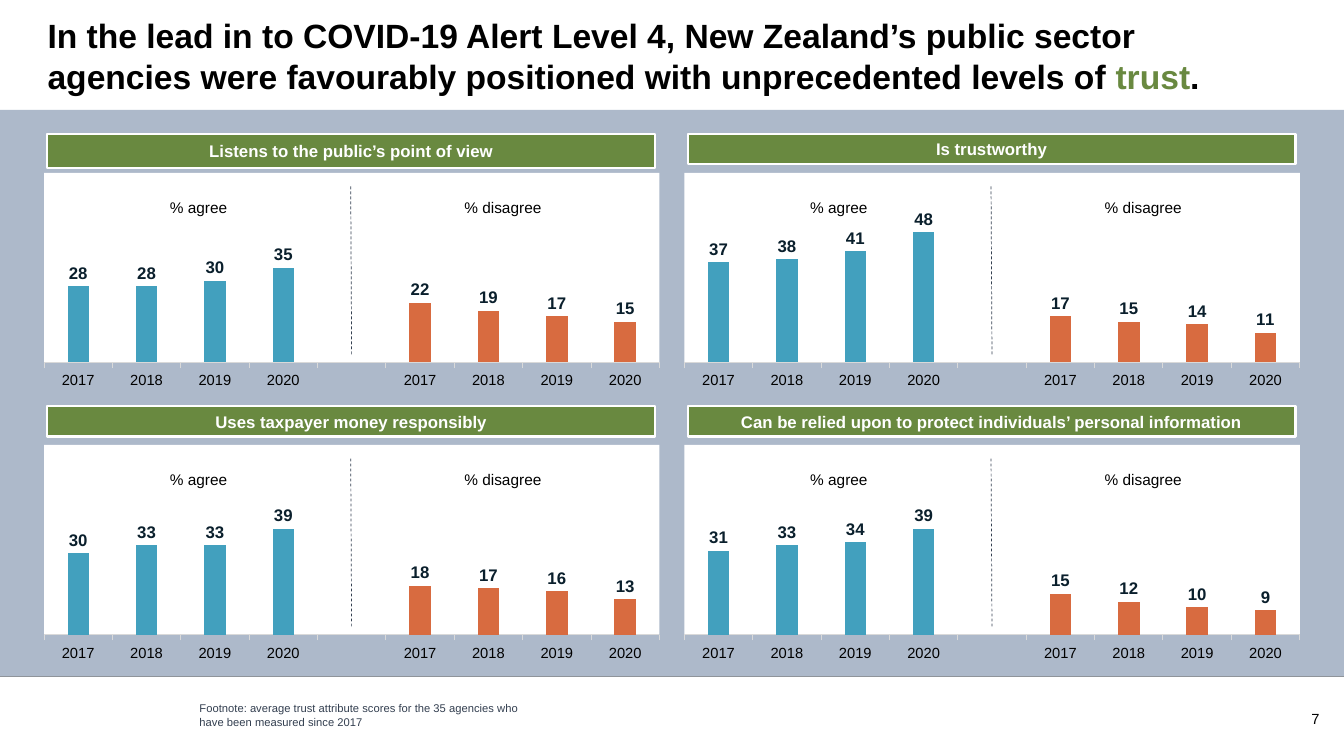
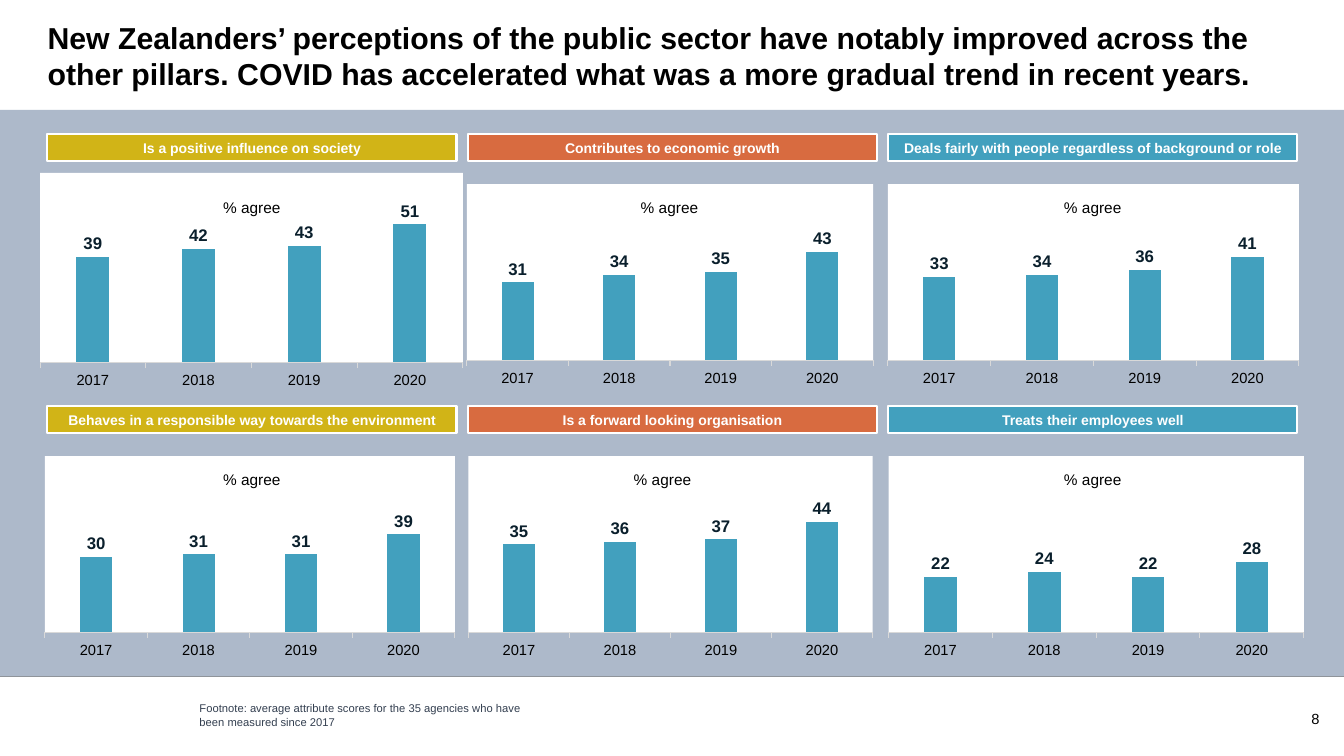
from dataclasses import dataclass

from pptx import Presentation
from pptx.chart.data import CategoryChartData
from pptx.dml.color import RGBColor
from pptx.enum.chart import XL_CHART_TYPE as ChartType
from pptx.enum.chart import XL_LABEL_POSITION as LabelPosition
from pptx.enum.chart import XL_TICK_MARK as TickMark
from pptx.enum.dml import MSO_LINE as LineStyle
from pptx.enum.shapes import MSO_CONNECTOR as Connector
from pptx.enum.shapes import MSO_SHAPE as Shape
from pptx.enum.text import MSO_ANCHOR as Anchor
from pptx.enum.text import MSO_AUTO_SIZE as AutoSize
from pptx.enum.text import PP_ALIGN as Align
from pptx.oxml import parse_xml
from pptx.oxml.ns import nsdecls, qn
from pptx.util import Pt

BLACK = RGBColor(0x00, 0x00, 0x00)
WHITE = RGBColor(0xFF, 0xFF, 0xFF)
GREEN = RGBColor(0x69, 0x89, 0x40)
BLUE = RGBColor(0x42, 0xA0, 0xBE)
ORANGE = RGBColor(0xD8, 0x6B, 0x40)
YELLOW = RGBColor(0xD1, 0xB4, 0x17)
BAND = RGBColor(0xAD, 0xB9, 0xCA)
SLATE = RGBColor(0x33, 0x3F, 0x50)
NAVY = RGBColor(0x0A, 0x1F, 0x2C)
RULE_GRAY = RGBColor(0x80, 0x80, 0x80)
AXIS_GRAY = RGBColor(0xD9, 0xD9, 0xD9)

FONT = "Arial"
SLIDE_WIDTH, SLIDE_HEIGHT = 960, 540
BAND_TOP, BAND_BOTTOM = 78.5, 483.1
FIRST_ROW, ROW_PITCH = 95.8, 194.4
CHART_HEIGHT = 161.3
YEARS = ["2017", "2018", "2019", "2020"]
WIDE_PLOT = (0.02, 0.02, 0.96, 0.84)


@dataclass
class Panel:
    heading: str
    values: list
    color: RGBColor = GREEN
    heading_height: float = 21.6
    chart_shift: float = 0
    chart_width: float = 303
    plot: tuple = WIDE_PLOT
    label_shift: float = 90


TRUST_PANELS = [
    Panel("Listens to the public’s point of view",
          [28, 28, 30, 35, None, 22, 19, 17, 15], heading_height=24),
    Panel("Is trustworthy", [37, 38, 41, 48, None, 17, 15, 14, 11]),
    Panel("Uses taxpayer money responsibly",
          [30, 33, 33, 39, None, 18, 17, 16, 13]),
    Panel("Can be relied upon to protect individuals’ personal information",
          [31, 33, 34, 39, None, 15, 12, 10, 9]),
]

PILLAR_PANELS = [
    Panel("Is a positive influence on society", [39, 42, 43, 51], YELLOW,
          19.4, -11.5, 314.6),
    Panel("Contributes to economic growth", [31, 34, 35, 43], ORANGE,
          19.4, -1, 291, (0, 0.07, 1, 0.78), 88),
    Panel("Deals fairly with people regardless of background or role",
          [33, 34, 36, 41], BLUE, 19.4, -0.5, 303, (0, 0.07, 0.97, 0.78)),
    Panel("Behaves in a responsible way towards the environment",
          [30, 31, 31, 39], YELLOW, 19.4, -11.5, 325.4,
          (0.03, 0.07, 0.9, 0.78)),
    Panel("Is a forward looking organisation", [35, 36, 37, 44], ORANGE,
          19.4, -11.5, 301, (0.04, 0.07, 0.96, 0.78), 83),
    Panel("Treats their employees well", [22, 24, 22, 28], BLUE,
          19.4, 0, 303, (0, 0.07, 0.98, 0.78)),
]


def style_font(font, size, color, bold=False):
    font.name = FONT
    font.size = Pt(size)
    font.bold = bold
    font.color.rgb = color


def write(shape, text, size, color, bold=False, align=Align.LEFT):
    frame = shape.text_frame
    frame.word_wrap = True
    frame.text = text
    paragraph = frame.paragraphs[0]
    paragraph.alignment = align
    style_font(paragraph.runs[0].font, size, color, bold)


def add_text(shapes, box, text, size, color, align=Align.LEFT):
    write(shapes.add_textbox(*map(Pt, box)), text, size, color, align=align)


def add_rectangle(shapes, box, color):
    shape = shapes.add_shape(Shape.RECTANGLE, *map(Pt, box))
    shape.shadow.inherit = False
    shape.fill.solid()
    shape.fill.fore_color.rgb = color
    shape.line.fill.background()
    return shape


def add_line(shapes, ends, color, dash=None):
    line = shapes.add_connector(Connector.STRAIGHT, *map(Pt, ends))
    line.line.color.rgb = color
    line.line.width = Pt(0.5)
    if dash:
        line.line.dash_style = dash
    properties = line._element.spPr
    properties.append(parse_xml(f"<a:effectLst {nsdecls('a')}/>"))


def add_frame(presentation, title_runs, title_size, footnote, number):
    slide = presentation.slides.add_slide(presentation.slide_layouts[5])
    shapes = slide.shapes
    add_line(shapes, (0, BAND_BOTTOM, SLIDE_WIDTH, BAND_BOTTOM), RULE_GRAY)
    add_text(shapes, (884, 503.3, 65.5, 21), number, 10.5, BLACK, Align.RIGHT)
    add_rectangle(shapes, (0, BAND_TOP, SLIDE_WIDTH, BAND_BOTTOM - BAND_TOP),
                  BAND)
    title = shapes.title
    title.left, title.top, title.width, title.height = map(
        Pt, (26.8, 0, 894.2, 79.2))
    frame = title.text_frame
    frame.word_wrap = True
    frame.auto_size = AutoSize.NONE
    frame.vertical_anchor = Anchor.MIDDLE
    paragraph = frame.paragraphs[0]
    paragraph.alignment = Align.LEFT
    for text, color in title_runs:
        run = paragraph.add_run()
        run.text = text
        style_font(run.font, title_size, color, True)
    add_text(shapes, (135.4, 497.5, 261.4, 26.6), footnote, 8, SLATE)
    return slide


def format_plot_area(chart, plot):
    chart_element = chart.element.find(qn("c:chart"))
    plot_area = chart_element.find(qn("c:plotArea"))
    for layout in plot_area.findall(qn("c:layout")):
        plot_area.remove(layout)
    places = "".join(f'<c:{name} val="{value}"/>'
                     for name, value in zip("xywh", plot))
    plot_area.insert(0, parse_xml(
        f'<c:layout {nsdecls("c")}><c:manualLayout>'
        '<c:layoutTarget val="inner"/><c:xMode val="edge"/>'
        f'<c:yMode val="edge"/>{places}</c:manualLayout></c:layout>'))
    plot_area.append(parse_xml(
        f'<c:spPr {nsdecls("c", "a")}><a:solidFill>'
        f'<a:srgbClr val="{WHITE}"/></a:solidFill></c:spPr>'))
    chart_element.addnext(parse_xml(
        f'<c:spPr {nsdecls("c", "a")}><a:noFill/>'
        '<a:ln><a:noFill/></a:ln></c:spPr>'))


def add_column_chart(shapes, box, categories, values, plot):
    data = CategoryChartData(number_format="#,##0")
    data.categories = categories
    data.add_series("Series 1", values)
    chart = shapes.add_chart(ChartType.COLUMN_CLUSTERED, *map(Pt, box),
                             data).chart
    chart.has_title = False
    chart.has_legend = False
    style_font(chart.font, 10, BLACK)
    format_plot_area(chart, plot)

    category_axis = chart.category_axis
    category_axis.major_tick_mark = TickMark.OUTSIDE
    category_axis.format.line.color.rgb = AXIS_GRAY
    category_axis.format.line.width = Pt(0.75)
    style_font(category_axis.tick_labels.font, 10.5, BLACK)
    value_axis = chart.value_axis
    value_axis.minimum_scale = 0
    value_axis.maximum_scale = 70
    value_axis.has_major_gridlines = False
    value_axis.visible = False

    columns = chart.plots[0]
    columns.vary_by_categories = False
    columns.gap_width = 219
    columns.overlap = -27
    series = columns.series[0]
    series.format.fill.solid()
    series.format.fill.fore_color.rgb = BLUE
    for index in range(len(YEARS) + 1, len(values)):
        fill = series.points[index].format.fill
        fill.solid()
        fill.fore_color.rgb = ORANGE
    labels = series.data_labels
    labels.show_value = True
    labels.position = LabelPosition.OUTSIDE_END
    labels.number_format = "#,##0"
    labels.number_format_is_linked = False
    style_font(labels.font, 12, NAVY, True)


def add_heading(shapes, box, panel, size):
    heading = add_rectangle(shapes, box, panel.color)
    heading.line.color.rgb = WHITE
    heading.line.width = Pt(1.5)
    heading.text_frame.vertical_anchor = Anchor.MIDDLE
    write(heading, panel.heading, size, WHITE, True, Align.CENTER)


def add_share_label(shapes, left, top, text):
    add_text(shapes, (left, top, 112.3, 23), text, 11, BLACK, Align.CENTER)


def add_trust_panel(slide, panel, left, top):
    shapes = slide.shapes.add_group_shape().shapes
    add_column_chart(shapes, (left - 11.5, top + 24.4, 457.9, CHART_HEIGHT),
                     YEARS + [""] + YEARS, panel.values, panel.plot)
    add_heading(shapes, (left, top, 434.2, panel.heading_height), panel, 12)
    add_line(shapes, (left + 216.7, top + 37.4, left + 217.4, top + 158.4),
             SLATE, LineStyle.DASH)
    add_share_label(shapes, left + 51.9, top + 42.4, "% agree")
    add_share_label(shapes, left + 269.3, top + 42.4, "% disagree")


def add_pillar_panel(slide, panel, left, top):
    shapes = slide.shapes.add_group_shape().shapes
    add_column_chart(
        shapes,
        (left + panel.chart_shift, top + 24.4, panel.chart_width, CHART_HEIGHT),
        YEARS, panel.values, panel.plot)
    add_heading(shapes, (left, top, 292.3, panel.heading_height), panel, 10)
    add_share_label(shapes, left + panel.label_shift, top + 42.4, "% agree")


def add_panel_grid(slide, panels, add_panel, columns, pitch):
    for index, panel in enumerate(panels):
        row, column = divmod(index, columns)
        add_panel(slide, panel, 33.8 + column * pitch,
                  FIRST_ROW + row * ROW_PITCH)


def main():
    presentation = Presentation()
    presentation.slide_width = Pt(SLIDE_WIDTH)
    presentation.slide_height = Pt(SLIDE_HEIGHT)

    trust_slide = add_frame(
        presentation,
        [("In the lead in to COVID-19 Alert Level 4, New Zealand’s public "
          "sector agencies were favourably positioned with unprecedented "
          "levels of ", BLACK), ("trust", GREEN), (".", BLACK)],
        24,
        "Footnote: average trust attribute scores for the 35 agencies who "
        "have been measured since 2017", "7")
    add_panel_grid(trust_slide, TRUST_PANELS, add_trust_panel, 2, 457.4)

    pillar_slide = add_frame(
        presentation,
        [("New Zealanders’ perceptions of the public sector have notably "
          "improved across the other pillars. COVID has accelerated what was "
          "a more gradual trend in recent years.", BLACK)],
        21.6,
        "Footnote: average attribute scores for the 35 agencies who have "
        "been measured since 2017", "8")
    add_panel_grid(pillar_slide, PILLAR_PANELS, add_pillar_panel, 3, 300.3)

    presentation.save("out.pptx")


if __name__ == "__main__":
    main()
